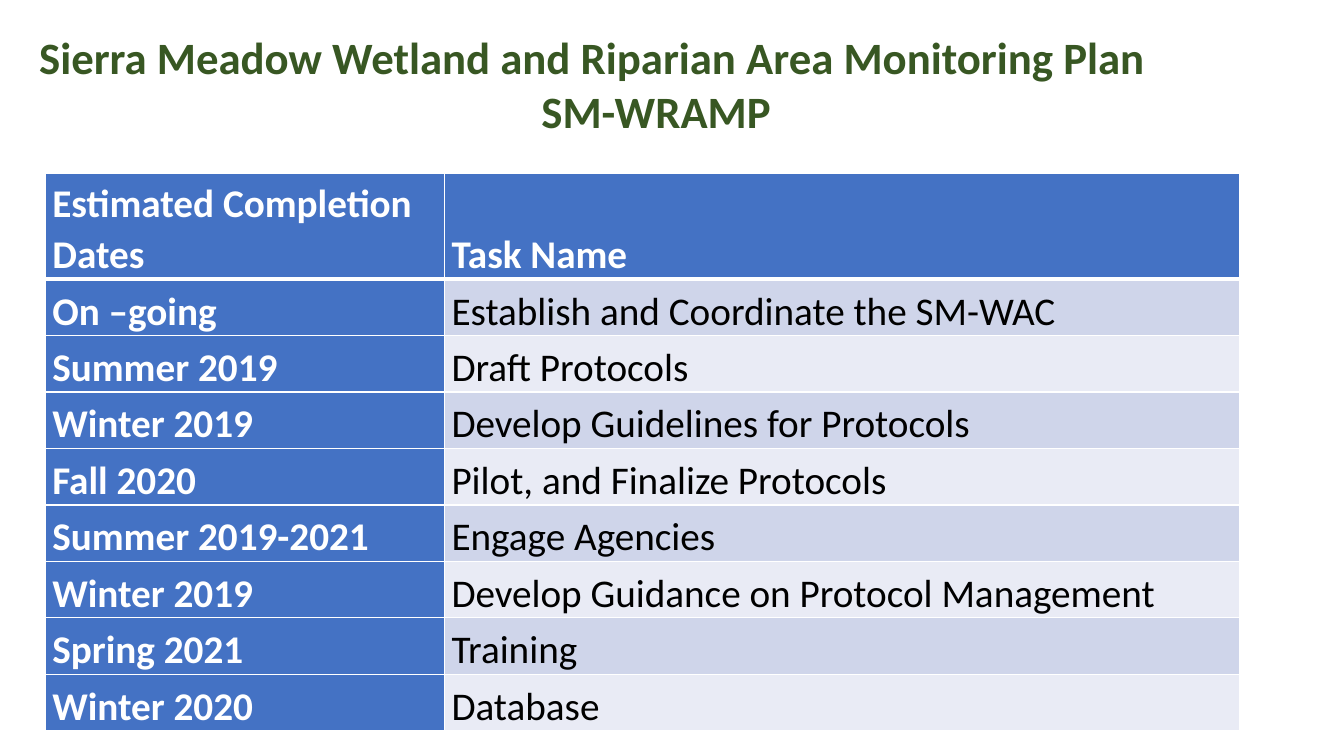
"""Build the monitoring plan schedule slide."""
from dataclasses import dataclass

from lxml import etree
from pptx import Presentation
from pptx.dml.color import RGBColor
from pptx.enum.text import MSO_ANCHOR, PP_ALIGN
from pptx.oxml.ns import qn
from pptx.slide import Slide
from pptx.table import _Cell
from pptx.text.text import _Paragraph
from pptx.util import Pt

LEFT, CENTER = PP_ALIGN.LEFT, PP_ALIGN.CENTER
BOTTOM = MSO_ANCHOR.BOTTOM
WHITE = RGBColor(0xFF, 0xFF, 0xFF)
BLACK = RGBColor(0x00, 0x00, 0x00)
GREEN = RGBColor(0x38, 0x57, 0x23)
BLUE = RGBColor(0x44, 0x72, 0xC4)
BANDS = (RGBColor(0xE9, 0xEB, 0xF5), RGBColor(0xCF, 0xD5, 0xEA))
FONT = "Calibri"
COLS = (285.12, 568.08)
HEAD, ROW = 75.6, 40.32
INSETS = {
    "margin_left": Pt(5.04),
    "margin_right": Pt(5.04),
    "margin_top": Pt(0),
    "margin_bottom": Pt(0),
    "vertical_anchor": BOTTOM,
}


@dataclass(frozen=True)
class Task:
    date: str
    name: str


TASKS = (
    Task("Estimated Completion Dates", "Task Name"),
    Task("On –going", "Establish and Coordinate the SM-WAC"),
    Task("Summer 2019", "Draft Protocols"),
    Task("Winter 2019", "Develop Guidelines for Protocols"),
    Task("Fall 2020", "Pilot, and Finalize Protocols"),
    Task("Summer 2019-2021", "Engage Agencies"),
    Task("Winter 2019", "Develop Guidance on Protocol Management"),
    Task("Spring 2021", "Training"),
    Task("Winter 2020", "Database"),
)
TITLE = (
    ("Sierra Meadow Wetland and Riparian Area Monitoring Plan", LEFT),
    ("SM-WRAMP ", CENTER),
)


def write(para: _Paragraph, text: str, size: float, color: RGBColor, bold: bool) -> None:
    run = para.add_run()
    run.text = text
    style = {"name": FONT, "size": Pt(size), "bold": bold}
    for key, value in style.items():
        setattr(run.font, key, value)
    run.font.color.rgb = color


def edge(cell: _Cell, side: str, width: float) -> None:
    props = cell._tc.get_or_add_tcPr()
    line = etree.SubElement(props, qn(f"a:ln{side}"), w=str(Pt(width)))
    fill = etree.SubElement(line, qn("a:solidFill"))
    etree.SubElement(fill, qn("a:srgbClr"), val=str(WHITE))


def fill_cell(cell: _Cell, text: str, row: int, col: int) -> None:
    key = row == 0 or col == 0
    for name, value in INSETS.items():
        setattr(cell, name, value)
    widths = {"L": 1, "R": 1, "T": 3 if row == 1 else 1, "B": 3 if row == 0 else 1}
    for side, width in widths.items():
        edge(cell, side, width)
    cell.fill.solid()
    cell.fill.fore_color.rgb = BLUE if key else BANDS[row % 2]
    para = cell.text_frame.paragraphs[0]
    para.line_spacing = 1.07
    write(para, text, 28, WHITE if key else BLACK, key)


def add_tasks(slide: Slide) -> None:
    high = HEAD + ROW * (len(TASKS) - 1)
    frame = slide.shapes.add_table(
        len(TASKS), len(COLS), Pt(32.4), Pt(123.84), Pt(sum(COLS)), Pt(high)
    )
    table = frame.table
    table.first_col = True
    for col, width in enumerate(COLS):
        table.columns[col].width = Pt(width)
    for row, task in enumerate(TASKS):
        table.rows[row].height = Pt(ROW if row else HEAD)
        for col, text in enumerate((task.date, task.name)):
            fill_cell(table.cell(row, col), text, row, col)


def add_title(slide: Slide) -> None:
    box = slide.shapes.add_textbox(Pt(20.88), Pt(18), Pt(902.88), Pt(84.96))
    frame = box.text_frame
    frame.word_wrap = True
    for index, (text, align) in enumerate(TITLE):
        para = frame.add_paragraph() if index else frame.paragraphs[0]
        para.alignment = align
        write(para, text, 32, GREEN, True)


def main() -> None:
    deck = Presentation()
    deck.slide_width, deck.slide_height = Pt(960), Pt(540)
    slide = deck.slides.add_slide(deck.slide_layouts[6])
    add_tasks(slide)
    add_title(slide)
    deck.save("out.pptx")


if __name__ == "__main__":
    main()
